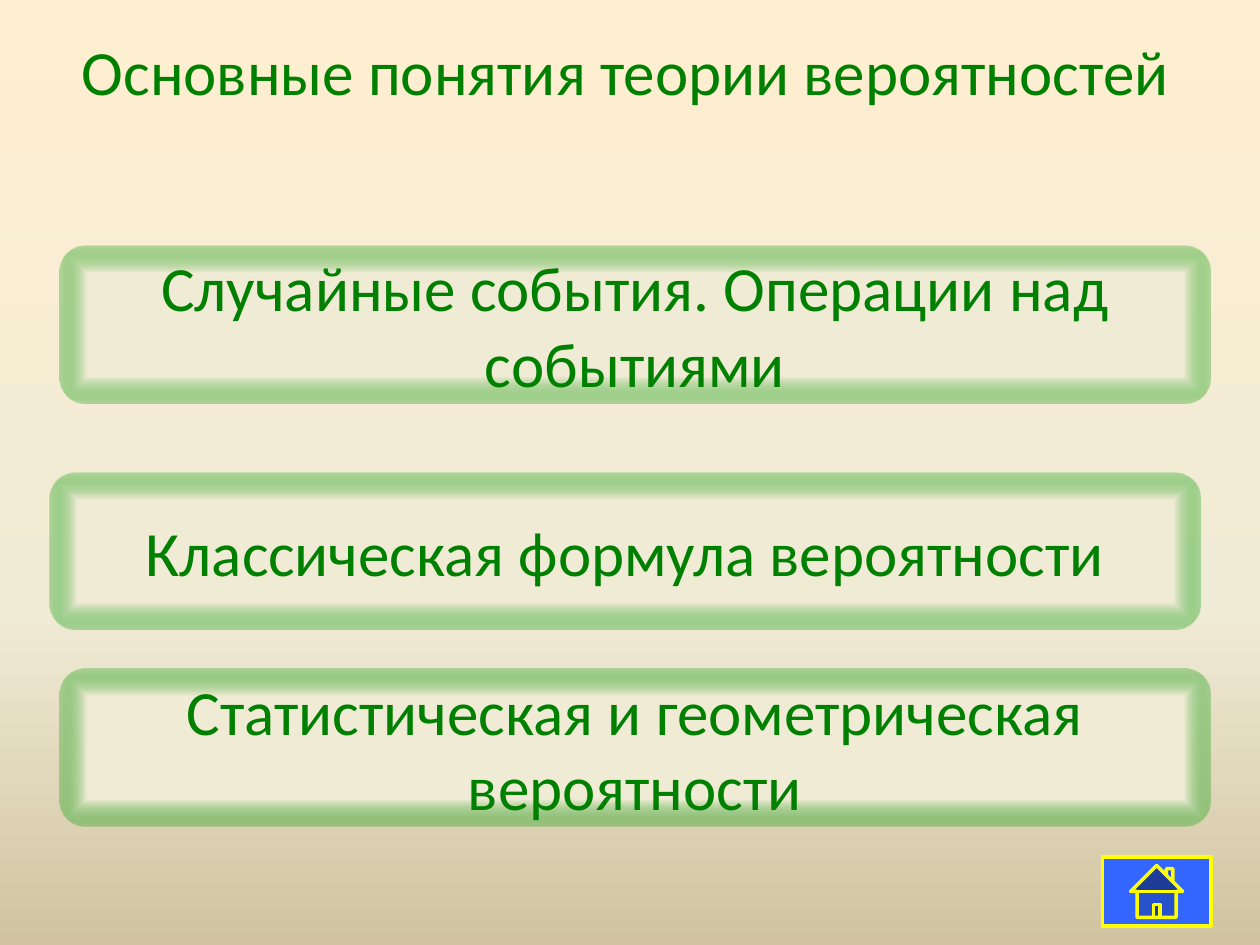
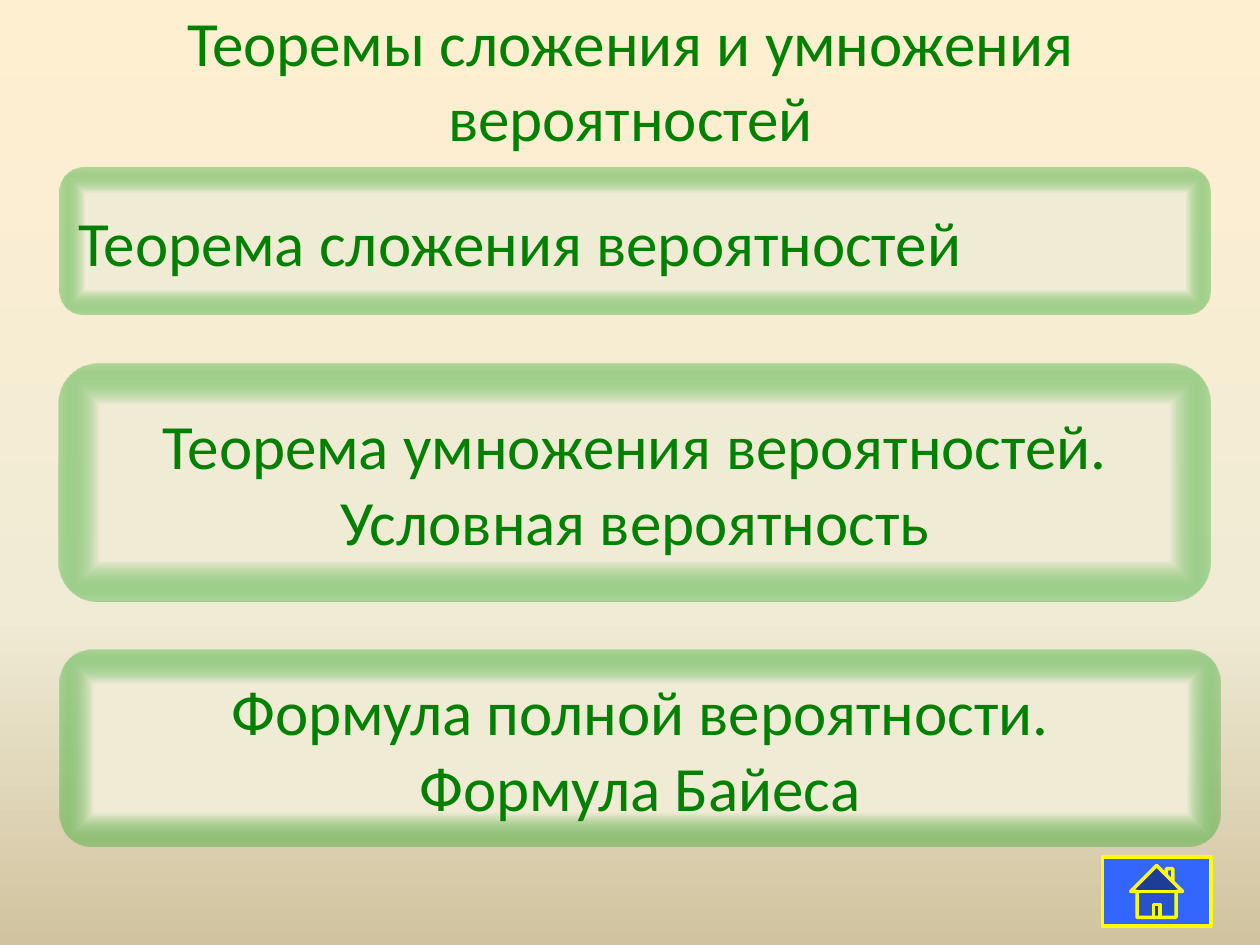
"""Builds two menu slides about probability theory."""
from lxml.etree import SubElement
from pptx import Presentation
from pptx.dml.color import RGBColor
from pptx.enum.shapes import MSO_SHAPE
from pptx.enum.text import MSO_ANCHOR, PP_ALIGN
from pptx.oxml.ns import qn
from pptx.util import Inches, Pt

WIDTH, HEIGHT = 10, 7.5
MARGIN, CARD_WIDTH = 0.47, 9.14
TITLE_LEFT, TITLE_HEIGHT, TITLE_LIFT = 0.16, 1.25, 0.65
HOME_BUTTON = (8.75, 6.8, 0.86, 0.55)
FONT, TEXT_SIZE = "Calibri", 36

CREAM = RGBColor(0xFF, 0xEF, 0xD1)
IVORY = RGBColor(0xF0, 0xEB, 0xD5)
SAND = RGBColor(0xD1, 0xC3, 0x9F)
LEAF = RGBColor(0x00, 0x99, 0x00)
GREEN = RGBColor(0x00, 0x80, 0x00)
BLUE = RGBColor(0x33, 0x66, 0xFF)
YELLOW = RGBColor(0xFF, 0xFF, 0x00)

BACKGROUND_STOPS = [(0, CREAM, 100), (65, IVORY, 100), (100, SAND, 100)]
CARD_STOPS = [(65, IVORY, 100), (100, LEAF, 27), (100, SAND, 100)]

SLIDES = [
    {
        "title": "Основные понятия теории вероятностей",
        "title_top": 0.23, "title_width": 9.61, "first_top": 1.95,
        "cards": [
            {"lines": ["Случайные события. Операции над событиями"],
             "height": 1.25, "gap_after": 0.55},
            {"lines": ["Классическая формула вероятности"],
             "height": 1.25, "gap_after": 0.31, "left": 0.39},
            {"lines": ["Статистическая и геометрическая вероятности"],
             "height": 1.25},
        ],
    },
    {
        "title": "Теоремы сложения и умножения вероятностей",
        "title_top": 0.3, "title_width": 9.69, "first_top": 1.33,
        "cards": [
            {"lines": ["Теорема сложения вероятностей"],
             "height": 1.17, "align": PP_ALIGN.LEFT},
            {"lines": ["Теорема умножения вероятностей. Условная вероятность"],
             "height": 1.88},
            {"lines": ["Формула полной вероятности.", "Формула Байеса"],
             "height": 1.56, "width": 9.22},
        ],
    },
]


def set_gradient(owner, stops, radial):
    solid = owner.find(qn("a:solidFill"))
    gradient = owner.makeelement(qn("a:gradFill"), {"rotWithShape": "1"})
    owner.replace(solid, gradient)
    stop_list = SubElement(gradient, qn("a:gsLst"))
    for position, color, opacity in stops:
        stop = SubElement(stop_list, qn("a:gs"), pos=str(position * 1000))
        tone = SubElement(stop, qn("a:srgbClr"), val=str(color))
        if opacity < 100:
            SubElement(tone, qn("a:alpha"), val=str(opacity * 1000))
    if radial:
        path = SubElement(gradient, qn("a:path"), path="shape")
        SubElement(path, qn("a:fillToRect"), l="50000", t="50000", r="50000", b="50000")
    else:
        SubElement(gradient, qn("a:lin"), ang="5400000", scaled="0")


def write_lines(box, lines, align=PP_ALIGN.CENTER):
    frame = box.text_frame
    frame.word_wrap = True
    frame.vertical_anchor = MSO_ANCHOR.MIDDLE
    for index, line in enumerate(lines):
        para = frame.add_paragraph() if index else frame.paragraphs[0]
        para.alignment = align
        span = para.add_run()
        span.text = line
        span.font.name = FONT
        span.font.size = Pt(TEXT_SIZE)
        span.font.color.rgb = GREEN


def add_title(page, content):
    area = (TITLE_LEFT, content["title_top"], content["title_width"], TITLE_HEIGHT)
    box = page.shapes.add_textbox(*map(Inches, area))
    box.text_frame.margin_bottom = Inches(TITLE_LIFT)
    write_lines(box, [content["title"]])


def add_cards(page, content):
    top = content["first_top"]
    for card in content["cards"]:
        area = (card.get("left", MARGIN), top, card.get("width", CARD_WIDTH), card["height"])
        box = page.shapes.add_shape(MSO_SHAPE.ROUNDED_RECTANGLE, *map(Inches, area))
        box.shadow.inherit = False
        box.line.fill.background()
        box.fill.solid()
        set_gradient(box.element.spPr, CARD_STOPS, radial=True)
        write_lines(box, card["lines"], card.get("align", PP_ALIGN.CENTER))
        top += card["height"] + card.get("gap_after", 0.39)


def add_home_button(page):
    button = page.shapes.add_shape(MSO_SHAPE.ACTION_BUTTON_HOME, *map(Inches, HOME_BUTTON))
    button.shadow.inherit = False
    button.fill.solid()
    button.fill.fore_color.rgb = BLUE
    button.line.color.rgb = YELLOW
    button.line.width = Pt(2)


def main():
    deck = Presentation()
    deck.slide_width, deck.slide_height = Inches(WIDTH), Inches(HEIGHT)
    for content in SLIDES:
        page = deck.slides.add_slide(deck.slide_layouts[6])
        page.background.fill.solid()
        backdrop = next(page.element.iter(qn("p:bgPr")))
        set_gradient(backdrop, BACKGROUND_STOPS, radial=False)
        add_title(page, content)
        add_cards(page, content)
        add_home_button(page)
    deck.save("out.pptx")


if __name__ == "__main__":
    main()
